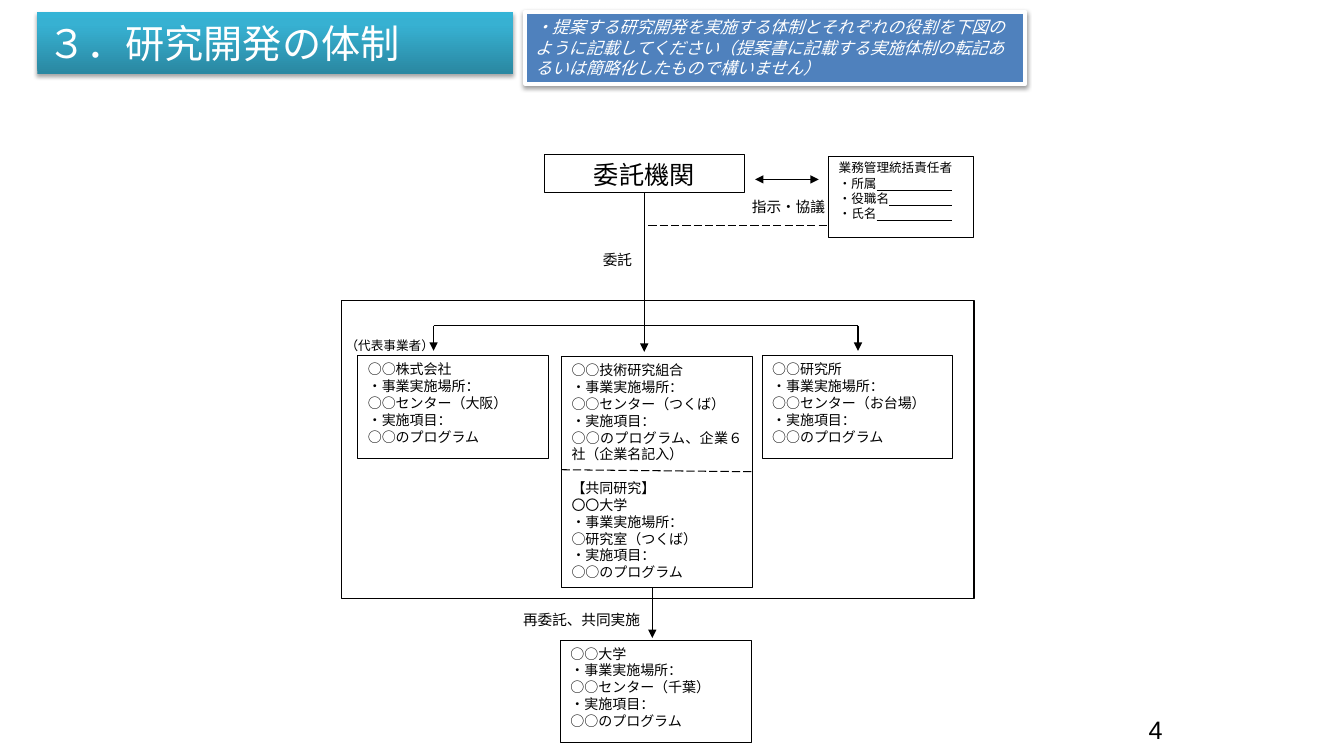
import copy

import pptx
import pptx.dml.color
import pptx.enum.dml
import pptx.enum.shapes
import pptx.enum.text
import pptx.oxml
import pptx.oxml.ns
import pptx.util

EMU_PER_PX = 9144  # 100 px to the inch
FONT = "Arial"
BLACK, WHITE = "000000", "FFFFFF"
ALIGN = pptx.enum.text.PP_ALIGN
ANCHOR = pptx.enum.text.MSO_ANCHOR
RECTANGLE = pptx.enum.shapes.MSO_SHAPE.RECTANGLE
STRAIGHT = pptx.enum.shapes.MSO_CONNECTOR.STRAIGHT
NAMESPACE = 'xmlns:a="http://schemas.openxmlformats.org/drawingml/2006/main"'


def px(length):
    return pptx.util.Emu(length * EMU_PER_PX)


def color(hex_string):
    return pptx.dml.color.RGBColor.from_string(hex_string)


def xml(text):
    return pptx.oxml.parse_xml(text)


def format_text(shape, size, font_color=BLACK, align=ALIGN.JUSTIFY, italic=False):
    for paragraph in shape.text_frame.paragraphs:
        paragraph.alignment = align
        for run in paragraph.runs:
            run.font.name = FONT
            run.font.size = pptx.util.Pt(size)
            run.font.italic = italic
            run.font.color.rgb = color(font_color)


def add_box(slide, box, lines=(), size=10, fill=WHITE, line=BLACK, width=0.75, **style):
    shape = slide.shapes.add_shape(RECTANGLE, *map(px, box))
    shape.shadow.inherit = False
    if fill:
        shape.fill.solid()
        shape.fill.fore_color.rgb = color(fill)
    else:
        shape.fill.background()
    if line:
        shape.line.color.rgb = color(line)
        shape.line.width = pptx.util.Pt(width)
    else:
        shape.line.fill.background()
    shape.text_frame.vertical_anchor = ANCHOR.TOP
    shape.text_frame.text = "\n".join(lines)
    format_text(shape, size, **style)
    return shape


def add_label(slide, box, text, size=10.5, **style):
    label = slide.shapes.add_textbox(*map(px, box))
    label.text_frame.word_wrap = True
    label.text_frame.text = text
    format_text(label, size, **style)
    return label


def add_line(slide, start, end, head=False, tail=False, dashed=False):
    connector = slide.shapes.add_connector(STRAIGHT, *map(px, (*start, *end)))
    connector.line.color.rgb = color(BLACK)
    connector.line.width = pptx.util.Pt(0.75)
    if dashed:
        connector.line.dash_style = pptx.enum.dml.MSO_LINE.LONG_DASH
    outline = connector.line._get_or_add_ln()
    for name, wanted in (("headEnd", head), ("tailEnd", tail)):
        if wanted:
            outline.append(xml(f'<a:{name} {NAMESPACE} type="triangle"/>'))
    connector._element.spPr.append(xml(f"<a:effectLst {NAMESPACE}/>"))
    return connector


def add_shadow(shape, opacity, distance):
    effects = shape._element.spPr.find(pptx.oxml.ns.qn("a:effectLst"))
    effects.append(xml(
        f'<a:outerShdw {NAMESPACE} blurRad="{pptx.util.Pt(3.1)}" '
        f'dist="{pptx.util.Pt(distance)}" dir="5400000" rotWithShape="0">'
        f'<a:srgbClr val="{BLACK}"><a:alpha val="{opacity * 1000}"/></a:srgbClr>'
        "</a:outerShdw>"))


def fill_gradient(shape, stops):
    shape.fill.gradient()
    shape.fill.gradient_angle = 90
    last = list(shape._element.spPr.iter(pptx.oxml.ns.qn("a:gs")))[-1]
    last.addnext(copy.deepcopy(last))
    for stop, (position, hex_string) in zip(shape.fill.gradient_stops, stops):
        stop.position = position
        stop.color.rgb = color(hex_string)


def participant(name, place, items="○○のプログラム"):
    return [name, "・事業実施場所：", place, "・実施項目：", items]


def draw_header(slide, box):
    left, top, width, height = box
    # Title bar
    title = add_box(slide, (left, top, 472, 61), ["３．研究開発の体制"], 28, line=None,
                    font_color=WHITE, align=ALIGN.LEFT)
    title.text_frame.vertical_anchor = ANCHOR.MIDDLE
    fill_gradient(title, [(0, "2A88A2"), (0.8, "37B1D2"), (1, "34B4D6")])
    add_shadow(title, 35, 1.8)
    # Writing instructions
    guide = add_box(
        slide, (left + 484, top, width - 484, height),
        ["・提案する研究開発を実施する体制とそれぞれの役割を下図のように記載してください"
         "（提案書に記載する実施体制の転記あるいは簡略化したもので構いません）"],
        12, "4F81BD", WHITE, 3, font_color=WHITE, align=ALIGN.LEFT, italic=True)
    add_shadow(guide, 38, 1.6)


def draw_management(slide, box):
    left, top, width, height = box
    right = left + width
    # Commissioning body
    body = add_box(slide, (left, top, 198, 38), ["委託機関"], 18, align=ALIGN.CENTER)
    # Responsible manager with blanks to fill in
    manager = add_box(slide, (right - 144, top + 2, 144, height - 2),
                      ["業務管理統括責任者", "・所属", "・役職名", "・氏名"], 9)
    frame = manager.text_frame
    frame.margin_top = frame.margin_bottom = px(4)
    for paragraph, blanks in zip(frame.paragraphs[1:], (6, 5, 6)):
        run = paragraph.add_run()
        run.text = "　" * blanks
        run.font.underline = True
    format_text(manager, 9)
    # Links between body and manager
    add_line(slide, (left + 209, top + 25), (right - 154, top + 25), head=True, tail=True)
    add_line(slide, (left + 103, top + 71), (right - 144, top + 71), dashed=True)
    add_label(slide, (left + 196, top + 38, 102, 33), "指示・協議")
    # Commission arrow
    arrow = add_line(slide, (left + 99, top + 38), (left + 99, top + 196), tail=True)
    arrow.begin_connect(body, 0 + 2)
    add_label(slide, (left + 48, top + 91, 55, 33), "委託")


def draw_consortium(slide, box):
    left, top, width, height = box
    # Branch to the outer participants
    bar, ends = top + 25, (left + 91, left + 512)
    add_line(slide, (ends[0], bar), (ends[1], bar))
    for x in ends:
        add_line(slide, (x, bar), (x, bar + 25), tail=True)
    # Outer participants
    for x, lines in ((417, participant("○○研究所", "○○センター（お台場）")),
                     (16, participant("○○株式会社", "○○センター（大阪）"))):
        add_box(slide, (left + x, top + 55, 189, 102), lines)
    add_label(slide, (left - 6, top + 32, 117, 29), "（代表事業者）", 9)
    # Central participant and its joint research partner
    middle = left + 218
    central = add_box(
        slide, (middle, top + 56, 189, 229),
        participant("○○技術研究組合", "○○センター（つくば）",
                    "○○のプログラム、企業６社（企業名記入）")
        + ["【共同研究】"] + participant("〇〇大学", "○研究室（つくば）"))
    central.text_frame.paragraphs[5].space_before = pptx.util.Pt(12)
    add_line(slide, (middle, top + 168), (middle + 189, top + 170), dashed=True)
    # Frame around all participants
    add_box(slide, box, fill=None, line="020000", width=1)


def draw_subcontract(slide, box):
    left, top, width, height = box
    add_box(slide, (left, top + 52, width, height - 52),
            participant("○○大学", "○○センター（千葉）"))
    add_line(slide, (left + 91, top), (left + 91, top + 50), tail=True)
    add_label(slide, (left - 47, top + 18, 140, 28), "再委託、共同実施")


def draw_page_number(slide, box):
    number = add_label(slide, box, "4", 18, align=ALIGN.RIGHT)
    frame = number.text_frame
    frame.word_wrap = False
    frame.vertical_anchor = ANCHOR.MIDDLE
    frame.margin_left = frame.margin_right = frame.margin_top = frame.margin_bottom = 0


def main():
    presentation = pptx.Presentation()
    presentation.slide_width, presentation.slide_height = px(1333), px(750)
    slide = presentation.slides.add_slide(presentation.slide_layouts[6])
    draw_header(slide, (37, 12, 980, 71))
    draw_management(slide, (540, 153, 426, 83))
    draw_consortium(slide, (339, 298, 627, 296))
    draw_subcontract(slide, (556, 583, 189, 154))
    draw_page_number(slide, (1095, 711, 58, 25))
    presentation.save("out.pptx")


if __name__ == "__main__":
    main()
